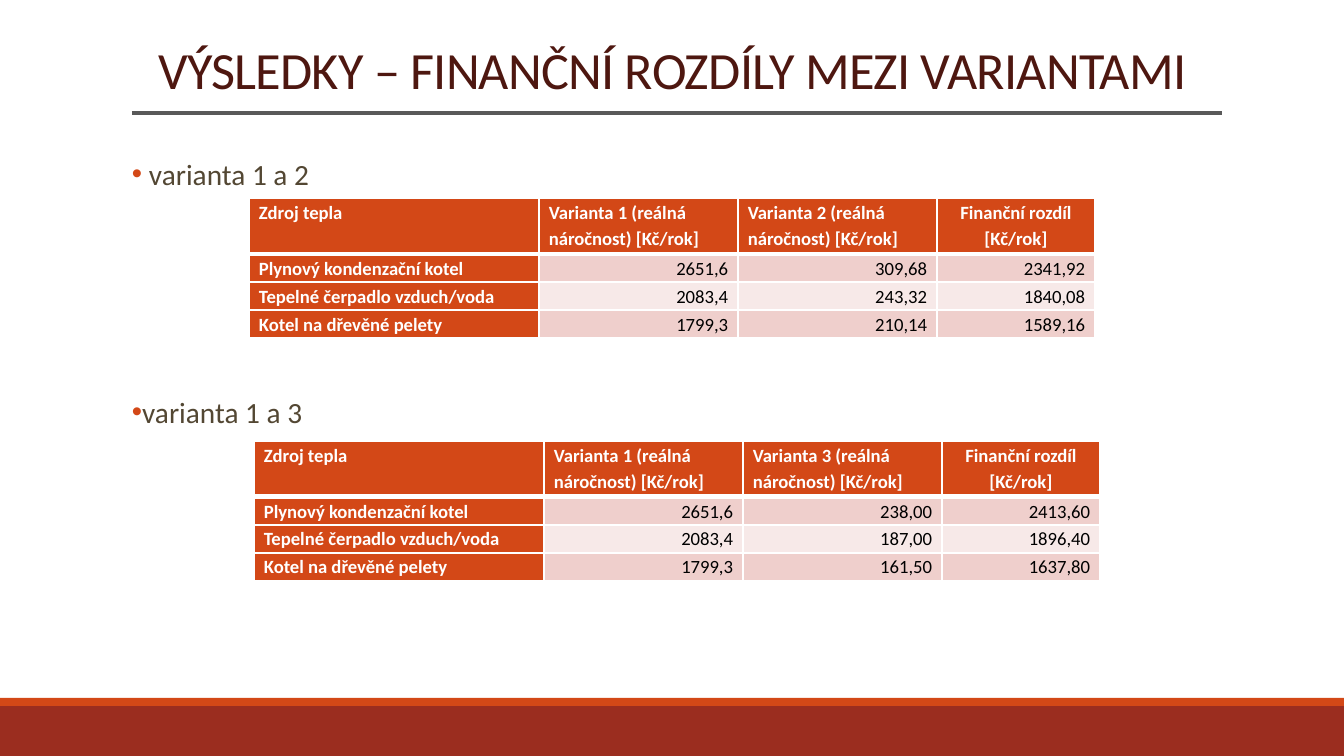
import dataclasses
import typing

import pptx
import pptx.dml.color
import pptx.enum.shapes
import pptx.enum.text
import pptx.oxml
import pptx.oxml.ns
import pptx.util

Align = pptx.enum.text.PP_ALIGN
Pt = pptx.util.Pt
EMU_PER_PX = 914400 / 134.4


@dataclasses.dataclass(frozen=True)
class Theme:
    font: str = "Calibri"
    title: str = "4E1710"
    body: str = "534733"
    accent: str = "D34817"
    footer: str = "9B2D1F"
    rule: str = "595959"
    white: str = "FFFFFF"
    black: str = "000000"
    bands: tuple[str, str] = ("EFCFCC", "F7E9E8")
    title_size: float = 28
    body_size: float = 15.7
    table_size: float = 10


@dataclasses.dataclass(frozen=True)
class Box:
    left: int
    top: int
    width: int
    height: int


@dataclasses.dataclass(frozen=True)
class Comparison:
    label: str
    label_indent: int
    space_before: int
    other_variant: int
    left: int
    top: int
    costs: tuple[tuple[str, str, str], ...]


THEME = Theme()
SOURCES = ("Plynový kondenzační kotel", "Tepelné čerpadlo vzduch/voda", "Kotel na dřevěné pelety")
COLUMN_WIDTHS = (290, 199, 199, 158)
ROW_HEIGHTS = (56, 28, 28, 28)
BULLET_HANG = 10
COMPARISONS = (
    Comparison("varianta 1 a 2", 17, 0, 2, 249, 198, (
        ("2651,6", "309,68", "2341,92"),
        ("2083,4", "243,32", "1840,08"),
        ("1799,3", "210,14", "1589,16"),
    )),
    Comparison("varianta 1 a 3", BULLET_HANG, 111, 3, 254, 441, (
        ("2651,6", "238,00", "2413,60"),
        ("2083,4", "187,00", "1896,40"),
        ("1799,3", "161,50", "1637,80"),
    )),
)


def px(length: int) -> int:
    return round(length * EMU_PER_PX)


def rgb(color: str) -> pptx.dml.color.RGBColor:
    return pptx.dml.color.RGBColor.from_string(color)


def apply_format(target: typing.Any, values: dict[str, typing.Any]) -> None:
    for name, value in values.items():
        setattr(target, name, value)


def place(box: Box) -> dict[str, int]:
    return {name: px(length) for name, length in dataclasses.asdict(box).items()}


def write(paragraph: typing.Any, text: str, size: float, color: str, bold: bool = False) -> None:
    run = paragraph.add_run()
    run.text = text
    apply_format(run.font, {"name": THEME.font, "size": Pt(size), "bold": bold})
    run.font.color.rgb = rgb(color)


def add_xml(parent: typing.Any, xml: str) -> None:
    """Append an element whose tag opens with the a: prefix."""
    tag, rest = xml[:xml.index(" ")], xml[xml.index(" "):]
    parent.append(pptx.oxml.parse_xml(f"{tag} {pptx.oxml.ns.nsdecls('a')}{rest}"))


def add_band(slide: typing.Any, box: Box, color: str) -> None:
    band = slide.shapes.add_shape(pptx.enum.shapes.MSO_SHAPE.RECTANGLE, **place(box))
    band.shadow.inherit = False
    band.fill.solid()
    band.fill.fore_color.rgb = rgb(color)
    band.line.fill.background()


def set_title(slide: typing.Any, text: str) -> None:
    title = slide.shapes.title
    apply_format(title, place(Box(0, 40, 1344, 63)))
    apply_format(title.text_frame, {
        "word_wrap": True,
        "auto_size": pptx.enum.text.MSO_AUTO_SIZE.NONE,
        "vertical_anchor": pptx.enum.text.MSO_ANCHOR.TOP,
    })
    paragraph = title.text_frame.paragraphs[0]
    apply_format(paragraph, {"alignment": Align.CENTER, "line_spacing": 0.85, "space_before": Pt(0)})
    write(paragraph, text, THEME.title_size, THEME.title)
    paragraph.runs[0].font._element.set("spc", "-40")


def add_rule(slide: typing.Any) -> None:
    rule = slide.shapes.add_connector(
        pptx.enum.shapes.MSO_CONNECTOR.STRAIGHT, px(132), px(113), px(1222), px(113))
    rule.line.width = Pt(0)
    rule.line.color.rgb = rgb(THEME.rule)
    add_xml(rule._element.spPr, "<a:effectLst />")


def add_labels(slide: typing.Any) -> None:
    frame = slide.shapes.add_textbox(**place(Box(132, 156, 1090, 508))).text_frame
    apply_format(frame, {"word_wrap": True, "margin_left": 0, "margin_right": 0})
    for index, comparison in enumerate(COMPARISONS):
        paragraph = frame.add_paragraph() if index else frame.paragraphs[0]
        apply_format(paragraph, {
            "line_spacing": 0.8,
            "space_before": Pt(comparison.space_before),
            "space_after": Pt(1.5),
        })
        properties = paragraph._p.get_or_add_pPr()
        properties.set("marL", str(px(comparison.label_indent)))
        properties.set("indent", str(-px(comparison.label_indent)))
        add_xml(properties, f'<a:buClr ><a:srgbClr val="{THEME.accent}"/></a:buClr>')
        add_xml(properties, '<a:buFont typeface="Arial"/>')
        add_xml(properties, '<a:buChar char="•"/>')
        write(paragraph, comparison.label, THEME.body_size, THEME.body)


def add_borders(cell: typing.Any, row: int) -> None:
    """White grid lines, with a heavier one below the header row."""
    widths = {"L": 1, "R": 1, "T": 3 if row == 1 else 1, "B": 3 if row == 0 else 1}
    for side, width in widths.items():
        add_xml(cell._tc.get_or_add_tcPr(),
                f'<a:ln{side} w="{Pt(width)}"><a:solidFill><a:srgbClr val="{THEME.white}"/>'
                f'</a:solidFill></a:ln{side}>')


def fill_cell(cell: typing.Any, text: str, row: int, column: int) -> None:
    heading = row == 0 or column == 0
    if row == 0:
        alignment = Align.CENTER if column == len(COLUMN_WIDTHS) - 1 else Align.LEFT
    else:
        alignment = Align.LEFT if column == 0 else Align.RIGHT
    apply_format(cell, {"margin_left": px(10), "margin_right": px(10),
                        "margin_top": 0, "margin_bottom": 0})
    add_borders(cell, row)
    cell.fill.solid()
    cell.fill.fore_color.rgb = rgb(THEME.accent if heading else THEME.bands[(row - 1) % 2])
    paragraph = cell.text_frame.paragraphs[0]
    apply_format(paragraph, {"alignment": alignment, "line_spacing": 1.15})
    write(paragraph, text, THEME.table_size, THEME.white if heading else THEME.black, heading)


def add_cost_table(slide: typing.Any, comparison: Comparison) -> None:
    header = (
        "Zdroj tepla",
        *(f"Varianta {number} (reálná náročnost) [Kč/rok]" for number in (1, comparison.other_variant)),
        "Finanční rozdíl [Kč/rok]",
    )
    rows = [header, *((source, *costs) for source, costs in zip(SOURCES, comparison.costs))]
    box = Box(comparison.left, comparison.top, sum(COLUMN_WIDTHS), sum(ROW_HEIGHTS))
    table = slide.shapes.add_table(len(rows), len(header), **place(box)).table
    for column, width in zip(table.columns, COLUMN_WIDTHS):
        column.width = px(width)
    for row, height in zip(table.rows, ROW_HEIGHTS):
        row.height = px(height)
    for row, texts in enumerate(rows):
        for column, text in enumerate(texts):
            fill_cell(table.cell(row, column), text, row, column)


def main() -> None:
    presentation = pptx.Presentation()
    apply_format(presentation, {"slide_width": px(1344), "slide_height": px(756)})
    slide = presentation.slides.add_slide(presentation.slide_layouts[5])
    add_band(slide, Box(0, 706, 1344, 50), THEME.footer)
    add_band(slide, Box(0, 698, 1344, 8), THEME.accent)
    add_labels(slide)
    set_title(slide, "VÝSLEDKY – FINANČNÍ ROZDÍLY MEZI VARIANTAMI")
    add_rule(slide)
    for comparison in COMPARISONS:
        add_cost_table(slide, comparison)
    presentation.save("out.pptx")


if __name__ == "__main__":
    main()
